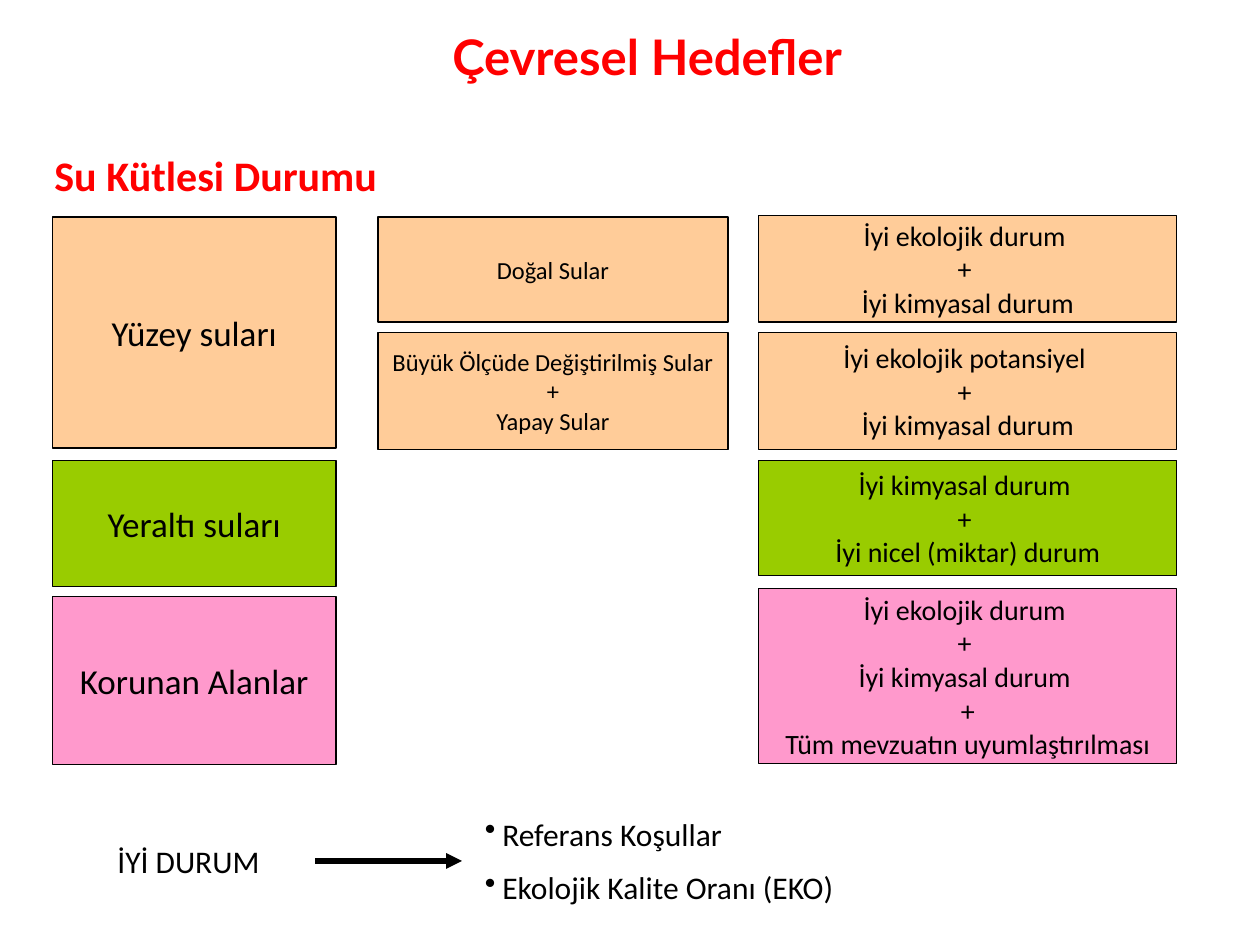
from lxml import etree
from pptx import Presentation
from pptx.dml.color import RGBColor
from pptx.enum import shapes, text
from pptx.oxml import ns
from pptx.util import Pt

BLACK, RED = "000000", "FF0000"
ORANGE, GREEN, PINK = "FFCC99", "99CC00", "FF99CC"


def color(value):
    return RGBColor.from_string(value)


def write(frame, lines, size, ink=BLACK, font="Calibri", bold=False, align=None,
          margin=0, indent=0, bullet=None, gap=0):
    """Fill a text frame with one paragraph per line; gap separates paragraphs."""
    for index, line in enumerate(lines):
        paragraph = frame.paragraphs[0] if index == 0 else frame.add_paragraph()
        paragraph.alignment = align
        if index and gap:
            paragraph.space_before = Pt(gap)
        properties = paragraph._p.get_or_add_pPr()
        if margin:
            properties.set("marL", str(Pt(margin)))
            properties.set("indent", str(Pt(indent)))
        if bullet:
            etree.SubElement(properties, ns.qn("a:buChar")).set("char", bullet)
        run = paragraph.add_run()
        run.text = line
        run.font.name = font
        run.font.size = Pt(size)
        run.font.bold = bold
        run.font.color.rgb = color(ink)


presentation = Presentation()
presentation.slide_width, presentation.slide_height = Pt(720), Pt(540)
slide = presentation.slides.add_slide(presentation.slide_layouts[6])

# Columns: left, width, text size
bodies = (30, 162, 20)
kinds = (216, 200, 14)
targets = (433.5, 239, 16)

# Column, top, height, fill, lines
boxes = [
    (bodies, 124, 132, ORANGE, ["Yüzey suları"]),
    (bodies, 263, 72, GREEN, ["Yeraltı suları"]),
    (bodies, 340.75, 96, PINK, ["Korunan Alanlar"]),
    (kinds, 124, 60, ORANGE, ["Doğal Sular"]),
    (kinds, 190, 67, ORANGE,
     ["Büyük Ölçüde Değiştirilmiş Sular", "+", "Yapay Sular"]),
    (targets, 123, 61, ORANGE,
     ["İyi ekolojik durum ", "+ ", "İyi kimyasal durum"]),
    (targets, 190, 67, ORANGE,
     ["İyi ekolojik potansiyel ", "+ ", "İyi kimyasal durum"]),
    (targets, 263, 66, GREEN,
     ["İyi kimyasal durum ", "+ ", "İyi nicel (miktar) durum"]),
    (targets, 336.5, 100, PINK,
     ["İyi ekolojik durum ", "+ ", "İyi kimyasal durum ", "+",
      "Tüm mevzuatın uyumlaştırılması"]),
]
for (left, width, size), top, height, fill, lines in boxes:
    box = slide.shapes.add_shape(shapes.MSO_SHAPE.RECTANGLE,
                                 Pt(left), Pt(top), Pt(width), Pt(height))
    box.shadow.inherit = False
    box.fill.solid()
    box.fill.fore_color.rgb = color(fill)
    box.line.color.rgb = color(BLACK)
    box.line.width = Pt(0.75)
    box.text_frame.word_wrap = False
    box.text_frame.vertical_anchor = text.MSO_ANCHOR.MIDDLE
    write(box.text_frame, lines, size, align=text.PP_ALIGN.CENTER)

# Left, top, width, height, lines, size, further text settings
labels = [
    (96, 11.5, 540, 41, ["Çevresel Hedefler"], 28,
     dict(ink=RED, font="Lato", bold=True, align=text.PP_ALIGN.CENTER,
          margin=15, indent=-7.5)),
    (24, 82, 206.5, 36.5, ["Su Kütlesi Durumu"], 24, dict(ink=RED, bold=True)),
    (60, 477.5, 132, 29, ["İYİ DURUM"], 18, {}),
    (270, 462, 324, 61, ["Referans Koşullar", "Ekolojik Kalite Oranı (EKO)"], 18,
     dict(margin=10, indent=-10, bullet="•", gap=9)),
]
for left, top, width, height, lines, size, settings in labels:
    label = slide.shapes.add_textbox(Pt(left), Pt(top), Pt(width), Pt(height))
    label.text_frame.word_wrap = True
    label.text_frame.auto_size = text.MSO_AUTO_SIZE.SHAPE_TO_FIT_TEXT
    write(label.text_frame, lines, size, **settings)

arrow = slide.shapes.add_connector(shapes.MSO_CONNECTOR.STRAIGHT,
                                   Pt(180), Pt(492), Pt(264), Pt(492))
arrow.line.color.rgb = color(BLACK)
arrow.line.width = Pt(3)
etree.SubElement(arrow.line._get_or_add_ln(), ns.qn("a:tailEnd")).set("type", "triangle")
etree.SubElement(arrow._element.spPr, ns.qn("a:effectLst"))

presentation.save("out.pptx")
